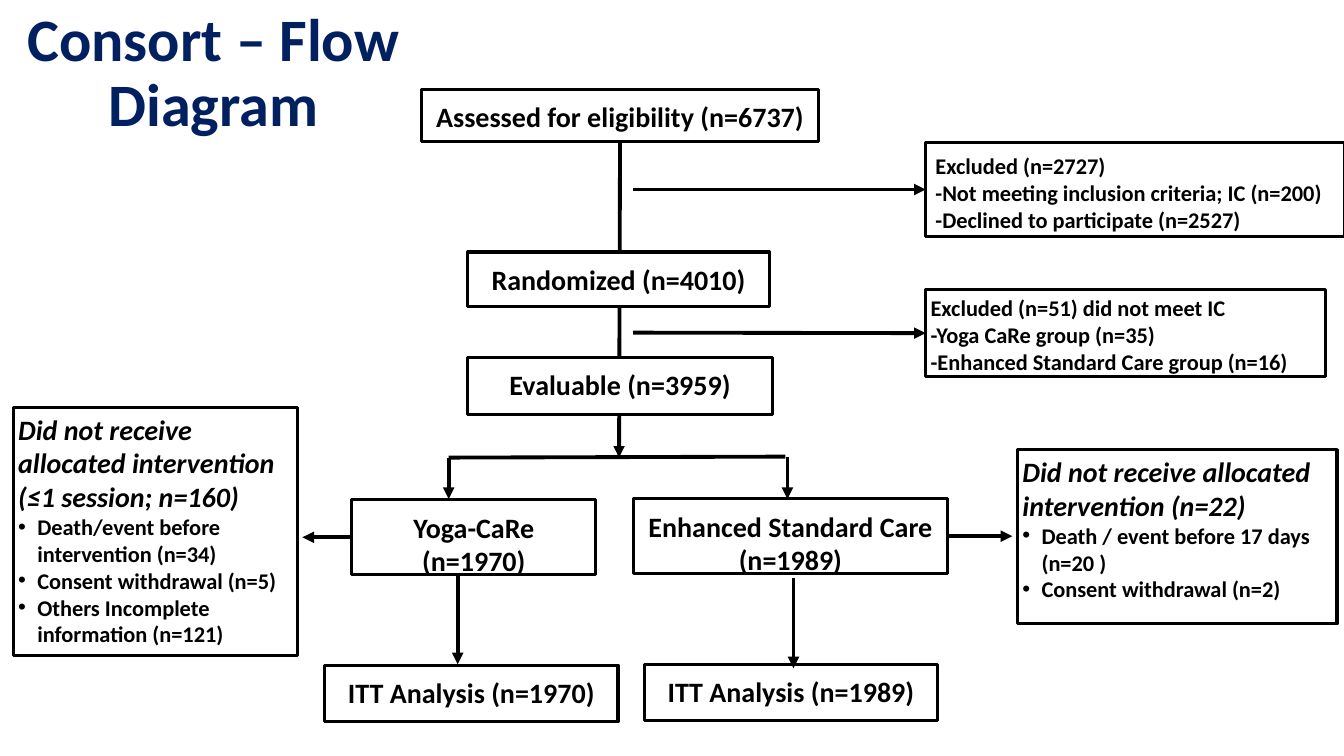
from dataclasses import dataclass

from lxml.etree import SubElement
from pptx import Presentation
from pptx.dml.color import RGBColor as RGB
from pptx.enum.shapes import MSO_CONNECTOR as CONN, MSO_SHAPE as SHAPE
from pptx.enum.text import MSO_ANCHOR as ANCHOR, MSO_AUTO_SIZE as AUTO, PP_ALIGN as ALIGN
from pptx.oxml.ns import qn
from pptx.util import Inches, Pt


@dataclass(frozen=True)
class Theme:
    """Colours, font and sizes of the flow diagram."""
    font: str = "Calibri"
    ink: RGB = RGB(0, 0, 0)
    paper: RGB = RGB(255, 255, 255)
    navy: RGB = RGB(0, 0x20, 0x60)
    title: int = 43
    step: int = 20
    note: int = 16
    border: float = 2.25
    arrow: float = 2.75


THEME = Theme()
TITLE = ("Consort – Flow Diagram", (0, 0.01, 4.23, 1.45))
STEPS = {
    "assessed": ((4.18, 0.89, 3.94, 0.51), ["Assessed for eligibility (n=6737)"]),
    "randomized": ((4.64, 2.5, 2.99, 0.54), ["Randomized (n=4010)"]),
    "evaluable": ((4.64, 3.55, 3.02, 0.56), ["Evaluable (n=3959)"]),
    "yoga": ((3.49, 4.96, 2.42, 0.74), ["Yoga-CaRe", "(n=1970)"]),
    "standard": ((6.28, 4.95, 3.12, 0.74), ["Enhanced Standard Care", "(n=1989)"]),
    "yoga_itt": ((3.22, 6.6, 2.91, 0.56), ["ITT Analysis (n=1970)"]),
    "standard_itt": ((6.39, 6.59, 2.91, 0.56), ["ITT Analysis (n=1989)"]),
}
EXCLUSIONS = {
    "ineligible": ((9.18, 1.41, 4.16, 0.94), 0.1, [
        "Excluded (n=2727)",
        "-Not meeting inclusion criteria; IC (n=200)",
        "-Declined to participate (n=2527)"]),
    "unmet": ((9.18, 2.87, 3.97, 0.87), 0.05, [
        "Excluded (n=51) did not meet IC",
        "-Yoga CaRe group (n=35)",
        "-Enhanced Standard Care group (n=16)"]),
}
DROPOUTS = [
    ((0.13, 4.04, 2.82, 2.46),
     "Did not receive allocated intervention (≤1 session; n=160)",
     ["Death/event before intervention (n=34)", "Consent withdrawal (n=5)",
      "Others Incomplete information (n=121)"]),
    ((10.09, 4.46, 3.17, 1.73),
     "Did not receive allocated intervention (n=22)",
     ["Death / event before 17 days (n=20 )", "Consent withdrawal (n=2)"]),
]
SPINE = ((6.15, 1.4), (6.14, 4.54), True, ("assessed", 2), None)
LINKS = [
    ((4.45, 4.54), (7.79, 4.53), False, None, None),
    ((4.45, 4.54), (4.45, 4.95), True, None, None),
    ((7.81, 4.53), (7.81, 4.95), True, None, None),
    ((4.54, 5.69), (4.54, 6.59), True, None, None),
    ((7.87, 5.73), (7.87, 6.63), True, None, None),
    ((3.49, 5.33), (3, 5.33), True, ("yoga", 1), None),
    ((9.4, 5.32), (10.04, 5.32), True, ("standard", 3), None),
    ((6.28, 1.88), (9.18, 1.88), True, None, ("ineligible", 1)),
    ((6.28, 3.3), (9.18, 3.3), True, None, ("unmet", 1)),
]


def place(s, at):
    for name, value in zip(("left", "top", "width", "height"), at):
        setattr(s, name, Inches(value))


def outline(s):
    s.fill.solid()
    s.fill.fore_color.rgb = THEME.paper
    s.line.color.rgb = THEME.ink
    s.line.width = Pt(THEME.border)


def set_frame(tf, inset, bottom=0, anchor=ANCHOR.TOP):
    side = Inches(inset)
    frame = {"word_wrap": True, "auto_size": AUTO.NONE, "vertical_anchor": anchor,
             "margin_left": side, "margin_right": side, "margin_top": side,
             "margin_bottom": Inches(bottom)}
    for name, value in frame.items():
        setattr(tf, name, value)


def write(p, text, size, align=ALIGN.LEFT, color=THEME.ink, italic=False, spacing=1.0):
    for name, value in {"alignment": align, "space_before": Pt(0),
                        "line_spacing": spacing}.items():
        setattr(p, name, value)
    r = p.add_run()
    r.text = text
    for name, value in {"name": THEME.font, "size": Pt(size), "bold": True,
                        "italic": italic}.items():
        setattr(r.font, name, value)
    r.font.color.rgb = color


def set_bullet(p, char=None, indent=0.0):
    pPr = p._p.get_or_add_pPr()
    pPr.set("marL", str(Inches(indent)))
    pPr.set("indent", str(-Inches(indent)))
    if char:
        SubElement(pPr, qn("a:buFont")).set("typeface", "Arial")
        SubElement(pPr, qn("a:buChar")).set("char", char)
    else:
        SubElement(pPr, qn("a:buNone"))


def paragraphs(tf, count):
    return [tf.paragraphs[0]] + [tf.add_paragraph() for _ in range(count - 1)]


def add_box(slide, at, lines, size, align, inset):
    s = slide.shapes.add_shape(SHAPE.RECTANGLE, *map(Inches, at))
    s.shadow.inherit = False
    outline(s)
    set_frame(s.text_frame, inset)
    for p, text in zip(paragraphs(s.text_frame, len(lines)), lines):
        write(p, text, size, align)
    return s


def fill_dropout(s, at, heading, reasons):
    place(s, at)
    outline(s)
    set_frame(s.text_frame, 0.05)
    first, *rest = paragraphs(s.text_frame, 1 + len(reasons))
    write(first, heading, THEME.step, italic=True)
    set_bullet(first)
    for p, text in zip(rest, reasons):
        write(p, text, THEME.note)
        set_bullet(p, "•", 0.19)


def add_link(slide, boxes, start, end, arrow, source, target):
    s = slide.shapes.add_connector(CONN.STRAIGHT, *map(Inches, start + end))
    if source:
        s.begin_connect(boxes[source[0]], source[1])
    if target:
        s.end_connect(boxes[target[0]], target[1])
    s.line.color.rgb = THEME.ink
    s.line.width = Pt(THEME.arrow)
    if arrow:
        SubElement(s.line._get_or_add_ln(), qn("a:tailEnd")).set("type", "triangle")
    SubElement(s._element.spPr, qn("a:effectLst"))
    return s


def main():
    """Build the participant flow slide."""
    prs = Presentation()
    prs.slide_width, prs.slide_height = Inches(13.33), Inches(7.5)
    slide = prs.slides.add_slide(prs.slide_layouts[3])
    title, *panels = slide.placeholders
    text, at = TITLE
    place(title, at)
    set_frame(title.text_frame, 0.05, 0.05, ANCHOR.MIDDLE)
    write(title.text_frame.paragraphs[0], text, THEME.title, ALIGN.CENTER, THEME.navy,
          spacing=0.9)
    for s, dropout in zip(panels, DROPOUTS):
        fill_dropout(s, *dropout)

    boxes = {}
    for name, (at, lines) in STEPS.items():
        boxes[name] = add_box(slide, at, lines, THEME.step, ALIGN.CENTER, 0.1)
    for name, (at, inset, lines) in EXCLUSIONS.items():
        boxes[name] = add_box(slide, at, lines, THEME.note, ALIGN.LEFT, inset)

    spine = add_link(slide, boxes, *SPINE)
    slide.shapes._spTree.insert(2, spine._element)
    for link in LINKS:
        add_link(slide, boxes, *link)
    prs.save("out.pptx")


if __name__ == "__main__":
    main()
